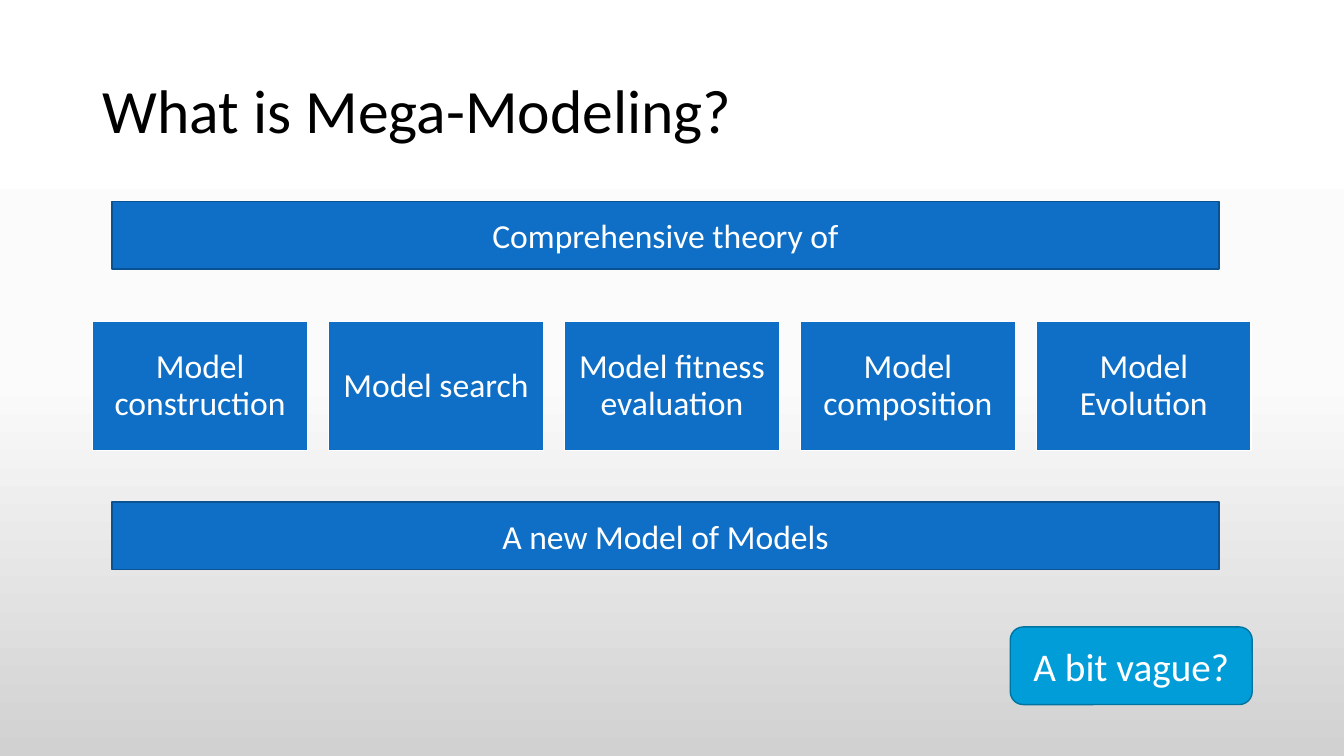
from copy import deepcopy

from pptx import Presentation
from pptx.dml.color import RGBColor as Rgb
from pptx.enum.shapes import MSO_SHAPE as Shape
from pptx.enum.text import MSO_ANCHOR as Anchor, MSO_AUTO_SIZE as Fit, PP_ALIGN as Align
from pptx.oxml.ns import qn
from pptx.util import Pt

PX = 9144  # 100 px to the inch

THEME = {
    "font": "Calibri",
    "black": "000000", "white": "FFFFFF",
    "blue": "0F6FC6", "navy": "0B5292",
    "cyan": "009DD9", "teal": "0074A1",
    "back": [(0, "FFFFFF"), (0.5, "FBFBFB"), (1, "D1D1D1")],
    "title": 44, "body": 24, "note": 28,
}


def write(shape, text, size, color, align):
    frame = shape.text_frame
    frame.text = text
    frame.word_wrap = True
    frame.auto_size = Fit.NONE
    frame.vertical_anchor = Anchor.MIDDLE
    para = frame.paragraphs[0]
    para.alignment = align
    font = para.runs[0].font
    font.name = THEME["font"]
    font.size = Pt(THEME[size])
    font.color.rgb = Rgb.from_string(THEME[color])
    return para


def add_box(kind, place, text, fill, edge, size="body"):
    box = slide.shapes.add_shape(kind, *[n * PX for n in place])
    box.shadow.inherit = False
    box.fill.solid()
    box.fill.fore_color.rgb = Rgb.from_string(THEME[fill])
    box.line.color.rgb = Rgb.from_string(THEME[edge])
    box.line.width = Pt(1)
    write(box, text, size, "white", Align.CENTER)
    return box


deck = Presentation()
deck.slide_width, deck.slide_height = 1333 * PX, 750 * PX
slide = deck.slides.add_slide(deck.slide_layouts[5])

# Background gradient, top to bottom
back = slide.background.fill
back.gradient()
back.gradient_angle = 270
stops = slide.element.find(".//" + qn("a:gsLst"))
stops.append(deepcopy(stops[-1]))
for stop, (spot, color) in zip(back.gradient_stops, THEME["back"]):
    stop.position = spot
    stop.color.rgb = Rgb.from_string(color)

# Title
title = slide.shapes.title
title.left, title.top, title.width, title.height = [n * PX for n in (92, 40, 1150, 145)]
write(title, "What is Mega-Modeling?", "title", "black", Align.LEFT).line_spacing = 0.9

# Row of topics
topics = ["Model construction", "Model search", "Model fitness evaluation",
          "Model composition", "Model Evolution"]
for i, topic in enumerate(topics):
    tile = add_box(Shape.RECTANGLE, (92 + 234 * i, 319, 213, 128), topic, "blue", "white")
    frame = tile.text_frame
    frame.margin_top = frame.margin_bottom = 10 * PX
    frame.paragraphs[0].line_spacing = 0.9

# Bars above and below the row
for top, text in [(200, "Comprehensive theory of"), (498, "A new Model of Models")]:
    add_box(Shape.RECTANGLE, (111, top, 1098, 67), text, "blue", "navy")

# Closing remark
add_box(Shape.ROUNDED_RECTANGLE, (1002, 622, 240, 77), "A bit vague?", "cyan", "teal", "note")

deck.save("out.pptx")
